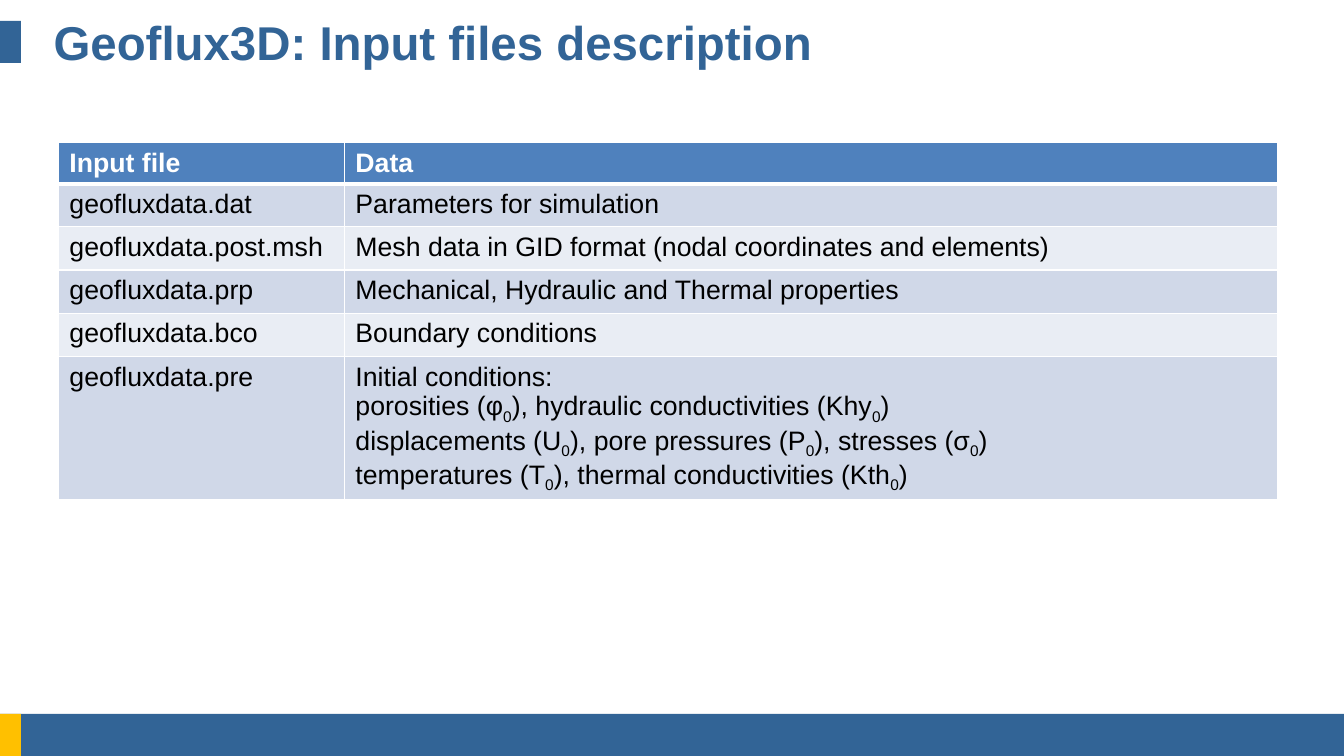
"""Build the slide that describes the Geoflux3D input files."""
import pptx
import pptx.dml.color
import pptx.enum.shapes
import pptx.enum.text
import pptx.oxml.ns
import pptx.util
from lxml import etree
from pptx.util import Cm

COLORS = {
    "blue": "326496",
    "amber": "FFC000",
    "white": "FFFFFF",
    "black": "000000",
    "header": "4F81BD",
    "odd": "D0D8E8",
    "even": "E9EDF4",
}
SUBSCRIPT = "_0"
INPUT_FILES = [
    ("Input file", ["Data"]),
    ("geofluxdata.dat", ["Parameters for simulation"]),
    ("geofluxdata.post.msh", ["Mesh data in GID format (nodal coordinates and elements)"]),
    ("geofluxdata.prp", ["Mechanical, Hydraulic and Thermal properties"]),
    ("geofluxdata.bco", ["Boundary conditions"]),
    ("geofluxdata.pre", [
        "Initial conditions:",
        "porosities (φ_0), hydraulic conductivities (Khy_0)",
        "displacements (U_0), pore pressures (P_0), stresses (σ_0)",
        "temperatures (T_0), thermal conductivities (Kth_0)",
    ]),
]
COLUMN_WIDTHS = [6.81, 22.2]
ROW_HEIGHTS = [0.97, 1.03, 1.03, 1.03, 1.03, 3.38]


def rgb(name):
    """Return the named colour."""
    return pptx.dml.color.RGBColor.from_string(COLORS[name])


def paint(filled, color):
    """Give a shape or cell a solid fill."""
    filled.fill.solid()
    filled.fill.fore_color.rgb = rgb(color)


def write(frame, lines, size=18, color="black", bold=False):
    """Write lines into a text frame, lowering each marked zero."""
    for index, line in enumerate(lines):
        paragraph = frame.paragraphs[0] if index == 0 else frame.add_paragraph()
        paragraph.alignment = pptx.enum.text.PP_ALIGN.LEFT
        for order, piece in enumerate(line.split(SUBSCRIPT)):
            parts = [(piece, False)] if order == 0 else [("0", True), (piece, False)]
            for text, lowered in parts:
                run = paragraph.add_run()
                run.text = text
                run.font.name = "Arial"
                run.font.size = pptx.util.Pt(size)
                run.font.bold = bold
                run.font.color.rgb = rgb(color)
                if lowered:
                    run.font._element.set("baseline", "-25000")


def add_bar(slide, left, top, width, height, color):
    """Add a plain coloured bar."""
    bar = slide.shapes.add_shape(
        pptx.enum.shapes.MSO_SHAPE.RECTANGLE, Cm(left), Cm(top), Cm(width), Cm(height))
    bar.shadow.inherit = False
    bar.line.fill.background()
    paint(bar, color)


def add_title(slide, text):
    """Place and format the title placeholder."""
    title = slide.shapes.title
    title.left, title.top, title.width, title.height = Cm(1.02), Cm(0.5), Cm(30), Cm(1)
    paint(title, "white")
    frame = title.text_frame
    frame.word_wrap = True
    frame.auto_size = pptx.enum.text.MSO_AUTO_SIZE.NONE
    frame.vertical_anchor = pptx.enum.text.MSO_ANCHOR.MIDDLE
    write(frame, [text], size=32, color="blue", bold=True)


def add_borders(cell, top=1, bottom=1):
    """Draw white borders of the given point widths around a cell."""
    properties = cell._tc.get_or_add_tcPr()
    for side, width in (("L", 1), ("R", 1), ("T", top), ("B", bottom)):
        border = etree.SubElement(
            properties, pptx.oxml.ns.qn(f"a:ln{side}"), w=str(pptx.util.Pt(width)))
        fill = etree.SubElement(border, pptx.oxml.ns.qn("a:solidFill"))
        etree.SubElement(fill, pptx.oxml.ns.qn("a:srgbClr"), val=COLORS["white"])


def add_file_table(slide):
    """Add the table of input files and their data."""
    table = slide.shapes.add_table(
        len(INPUT_FILES), len(COLUMN_WIDTHS), Cm(1.4), Cm(3.4),
        Cm(sum(COLUMN_WIDTHS)), Cm(sum(ROW_HEIGHTS))).table
    for column, width in zip(table.columns, COLUMN_WIDTHS):
        column.width = Cm(width)
    for index, (file_name, data) in enumerate(INPUT_FILES):
        table.rows[index].height = Cm(ROW_HEIGHTS[index])
        is_header = index == 0
        band = "header" if is_header else ("even", "odd")[index % 2]
        for cell, lines in zip(table.rows[index].cells, ([file_name], data)):
            add_borders(cell, top=3 if index == 1 else 1, bottom=3 if is_header else 1)
            paint(cell, band)
            write(cell.text_frame, lines, bold=is_header,
                  color="white" if is_header else "black")


def main():
    """Build and save the slide."""
    deck = pptx.Presentation()
    deck.slide_width, deck.slide_height = Cm(32), Cm(18)
    slide = deck.slides.add_slide(deck.slide_layouts[5])
    add_bar(slide, 0, 17, 32, 1, "blue")
    add_bar(slide, 0, 17, 0.5, 1, "amber")
    add_bar(slide, 0, 0.5, 0.5, 1, "blue")
    add_title(slide, "Geoflux3D: Input files description")
    add_file_table(slide)
    deck.save("out.pptx")


if __name__ == "__main__":
    main()
